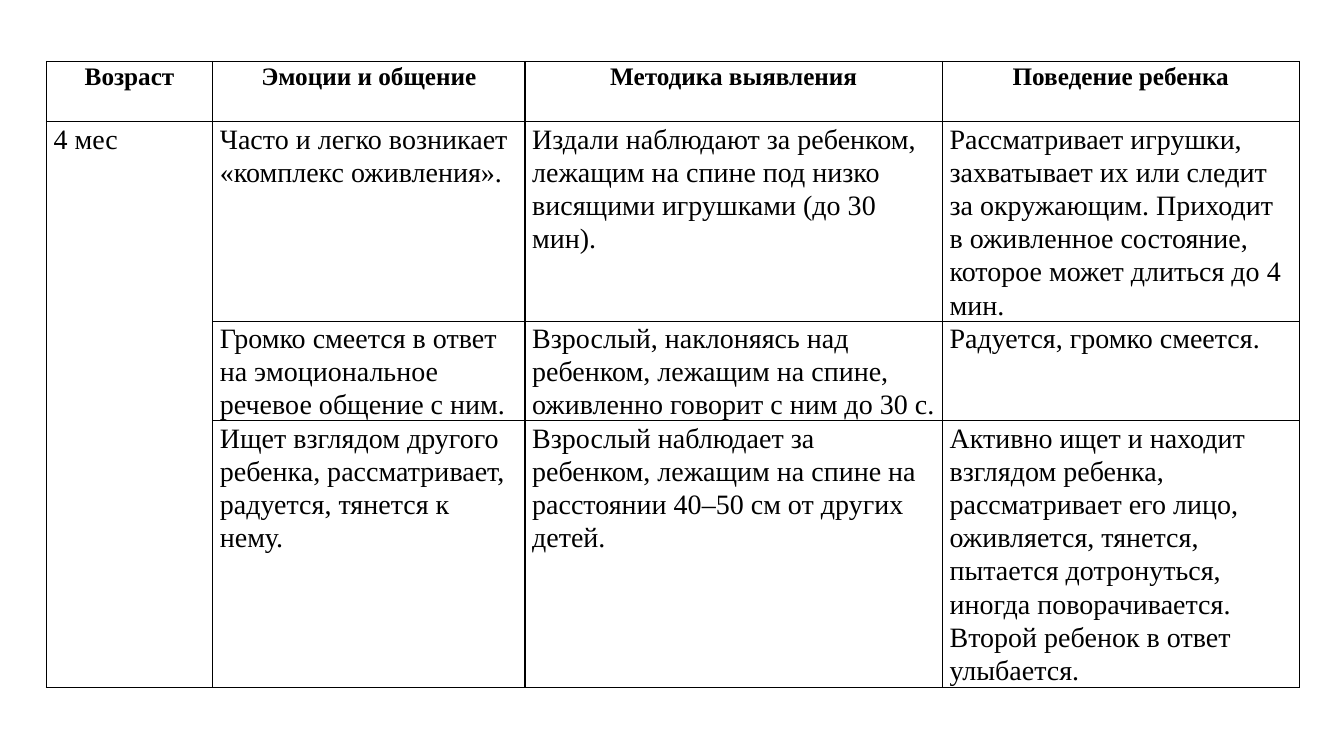
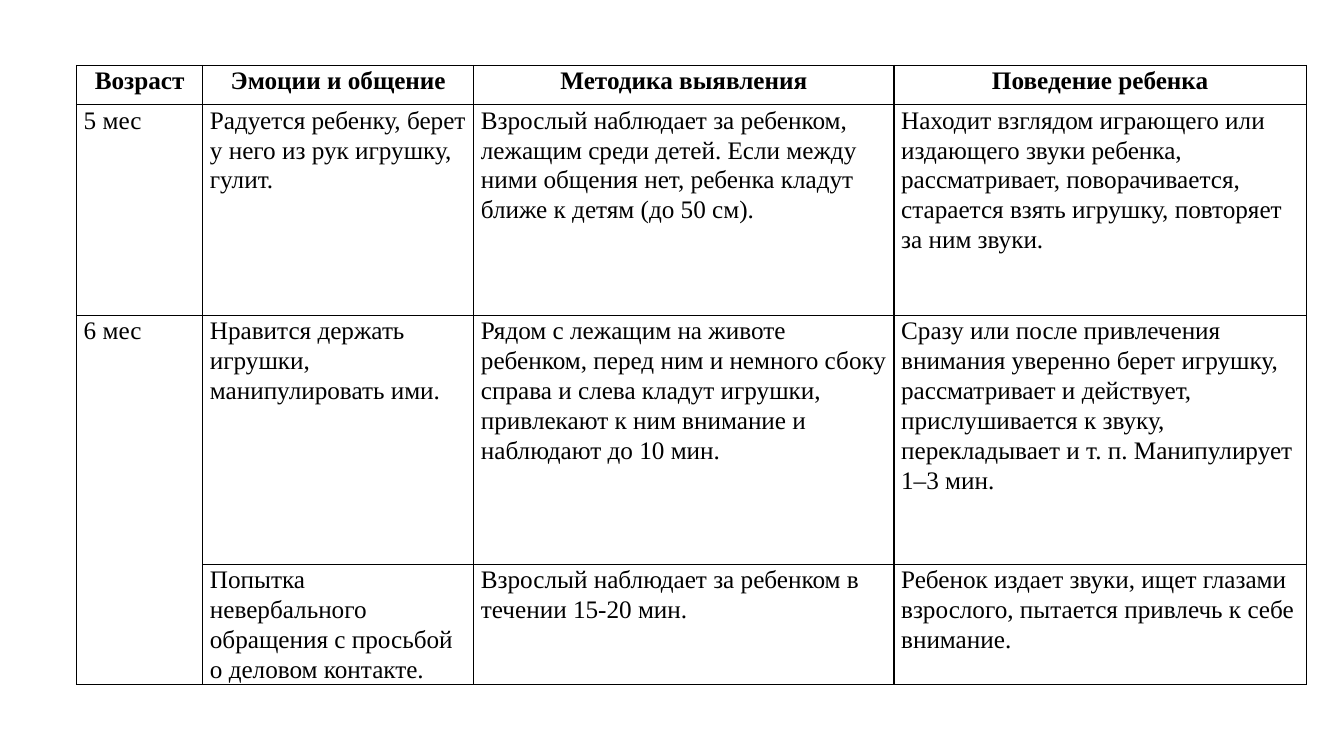
"""Build two slides with tables of infant emotional development by age."""
from lxml.etree import SubElement as Sub
from pptx import Presentation
from pptx.dml.color import RGBColor as RGB
from pptx.enum.text import PP_ALIGN as AL
from pptx.oxml.ns import qn
from pptx.util import Cm, Pt

COLORS = {"text": "000000", "border": "000000"}
FONT = "Times New Roman"
HEADER_SIZE = 18
BORDER_WIDTH = Pt(1)
HEADER = ["Возраст", "Эмоции и общение", "Методика выявления", "Поведение ребенка"]

TABLES = [
    {
        "left": 1.17, "top": 1.55, "size": 20, "merge": (1, 3),
        "cols": [4.19, 7.87, 10.52, 8.99],
        "rows": [1.52, 5.02, 2.51, 6.71],
        "body": [
            ["4 мес",
             "Часто и легко возникает «комплекс оживления».",
             "Издали наблюдают за ребенком, лежащим на спине под низко висящими игрушками (до 30 мин).",
             "Рассматривает игрушки, захватывает их или следит за окружающим. Приходит в оживленное "
             "состояние, которое может длиться до 4 мин."],
            ["",
             "Громко смеется в ответ на эмоциональное речевое общение с ним.",
             "Взрослый, наклоняясь над ребенком, лежащим на спине, оживленно говорит с ним до 30 с.",
             "Радуется, громко смеется."],
            ["",
             "Ищет взглядом другого ребенка, рассматривает, радуется, тянется к нему.",
             "Взрослый наблюдает за ребенком, лежащим на спине на расстоянии 40–50 см от других детей.",
             "Активно ищет и находит взглядом ребенка, рассматривает его лицо, оживляется, тянется, "
             "пытается дотронуться, иногда поворачивается. Второй ребенок в ответ улыбается."],
        ],
    },
    {
        "left": 1.93, "top": 1.65, "size": 18, "merge": (2, 3),
        "cols": [3.18, 6.83, 10.59, 10.39],
        "rows": [0.99, 5.31, 6.27, 3.02],
        "body": [
            ["5 мес",
             "Радуется ребенку, берет у него из рук игрушку, гулит.",
             "Взрослый наблюдает за ребенком, лежащим среди детей. Если между ними общения нет, "
             "ребенка кладут ближе к детям (до 50 см).",
             "Находит взглядом играющего или издающего звуки ребенка, рассматривает, поворачивается, "
             "старается взять игрушку, повторяет за ним звуки."],
            ["6 мес",
             "Нравится держать игрушки, манипулировать ими.",
             "Рядом с лежащим на животе ребенком, перед ним и немного сбоку справа и слева кладут "
             "игрушки, привлекают к ним внимание и наблюдают до 10 мин.",
             "Сразу или после привлечения внимания уверенно берет игрушку, рассматривает и действует, "
             "прислушивается к звуку, перекладывает и т. п. Манипулирует 1–3 мин."],
            ["",
             "Попытка невербального обращения с просьбой о деловом контакте.",
             "Взрослый наблюдает за ребенком в течении 15-20 мин.",
             "Ребенок издает звуки, ищет глазами взрослого, пытается привлечь к себе внимание."],
        ],
    },
]


def add_borders(cell):
    tc_pr = cell._tc.get_or_add_tcPr()
    for side in ("lnL", "lnR", "lnT", "lnB"):
        ln = Sub(tc_pr, qn(f"a:{side}"), w=str(BORDER_WIDTH))
        Sub(Sub(ln, qn("a:solidFill")), qn("a:srgbClr"), val=COLORS["border"])


def fill_cell(cell, text, size, header):
    cell.margin_left = cell.margin_right = Cm(0.18)
    cell.margin_top = cell.margin_bottom = 0
    add_borders(cell)
    cell.fill.background()
    p = cell.text_frame.paragraphs[0]
    p.text = text
    p.alignment = AL.CENTER if header else AL.LEFT
    p.line_spacing = 1.07
    p.font.name = FONT
    p.font.size = Pt(size)
    p.font.bold = header
    p.font.color.rgb = RGB.from_string(COLORS["text"])


prs = Presentation()
prs.slide_width, prs.slide_height = Cm(33.87), Cm(19.05)

for spec_t in TABLES:
    s = prs.slides.add_slide(prs.slide_layouts[6])
    cols, rows = spec_t["cols"], spec_t["rows"]
    table = s.shapes.add_table(len(rows), len(cols), Cm(spec_t["left"]), Cm(spec_t["top"]),
                               Cm(sum(cols)), Cm(sum(rows))).table
    table.first_row = table.horz_banding = False
    for col, width in zip(table.columns, cols):
        col.width = Cm(width)
    for row, height in zip(table.rows, rows):
        row.height = Cm(height)
    for i, texts in enumerate([HEADER] + spec_t["body"]):
        for j, text in enumerate(texts):
            fill_cell(table.cell(i, j), text, HEADER_SIZE if i == 0 else spec_t["size"], i == 0)
    first, last = spec_t["merge"]
    table.cell(first, 0).merge(table.cell(last, 0))

prs.save("out.pptx")
